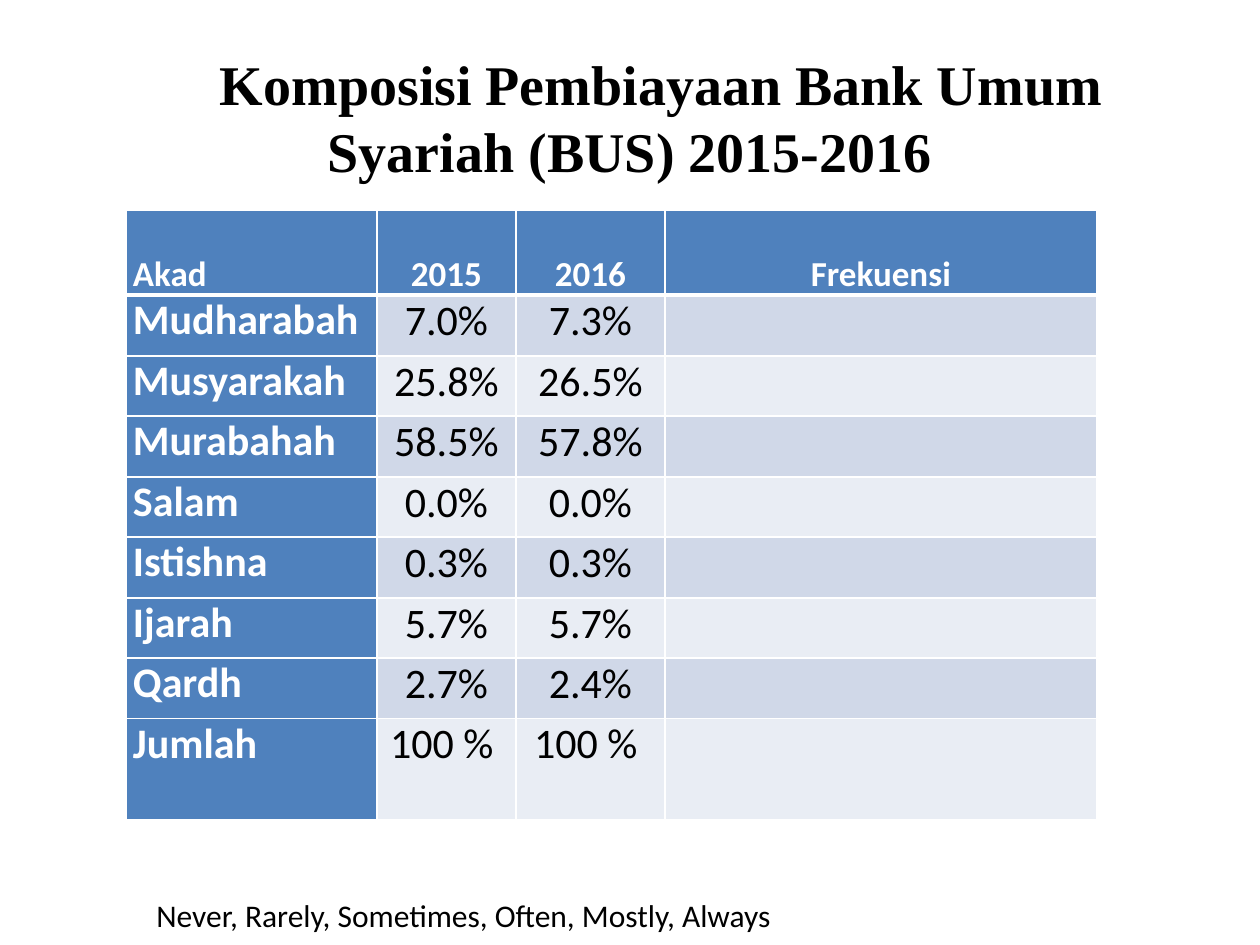
from lxml import etree
from pptx import Presentation, util as u
from pptx.dml.color import RGBColor
from pptx.enum import text
from pptx.oxml import ns

PX = 914400 // 126
COLORS = {"black": "000000", "white": "FFFFFF", "blue": "4F81BD",
          "dark_band": "D0D8E8", "light_band": "E9EDF4"}
CENTER, JUSTIFY = text.PP_ALIGN.CENTER, text.PP_ALIGN.JUSTIFY


def style(paragraph, size, color, bold=False, font="Calibri", align=None):
    paragraph.font.name = font
    paragraph.font.size = u.Pt(size)
    paragraph.font.bold = bold
    paragraph.font.color.rgb = RGBColor.from_string(COLORS[color])
    paragraph.alignment = align


def add_borders(cell, bottom_width):
    # Borders must come before the fill in the cell properties
    widths = {"lnL": 1, "lnR": 1, "lnT": 1, "lnB": bottom_width}
    for position, (side, width) in enumerate(widths.items()):
        line = etree.Element(ns.qn(f"a:{side}"), w=str(u.Pt(width)))
        fill = etree.SubElement(line, ns.qn("a:solidFill"))
        etree.SubElement(fill, ns.qn("a:srgbClr"), val=COLORS["white"])
        cell._tc.get_or_add_tcPr().insert(position, line)


prs = Presentation()
prs.slide_width, prs.slide_height = 1260 * PX, 945 * PX
slide = prs.slides.add_slide(prs.slide_layouts[6])

# Title, with an indented first line
title = slide.shapes.add_textbox(63 * PX, 38 * PX, 1134 * PX, 157 * PX).text_frame
title.word_wrap = True
title.vertical_anchor = text.MSO_ANCHOR.MIDDLE
heading = title.paragraphs[0]
heading.text = "Komposisi Pembiayaan Bank Umum Syariah (BUS) 2015-2016"
style(heading, 32, "black", True, "Times New Roman", CENTER)
heading._p.get_or_add_pPr().set("indent", str(63 * PX))

# Financing table
financing = [
    ("Akad", "2015", "2016", "Frekuensi"),
    ("Mudharabah", "7.0%", "7.3%", ""),
    ("Musyarakah", "25.8%", "26.5%", ""),
    ("Murabahah", "58.5%", "57.8%", ""),
    ("Salam", "0.0%", "0.0%", ""),
    ("Istishna", "0.3%", "0.3%", ""),
    ("Ijarah", "5.7%", "5.7%", ""),
    ("Qardh", "2.7%", "2.4%", ""),
    ("Jumlah", "100 % ", "100 % ", ""),
]
column_widths = [251, 139, 149, 432]
row_heights = [85, 61, 60, 61, 60, 61, 60, 61, 101]
table = slide.shapes.add_table(
    len(financing), len(column_widths), 126 * PX, 210 * PX,
    sum(column_widths) * PX, sum(row_heights) * PX).table
for column, width in zip(table.columns, column_widths):
    column.width = width * PX
for row, height in zip(table.rows, row_heights):
    row.height = height * PX

for r, values in enumerate(financing):
    for c, value in enumerate(values):
        cell = table.cell(r, c)
        header, label = r == 0, c == 0
        strong = header or label
        band = "blue" if strong else "dark_band" if r % 2 else "light_band"
        cell.fill.solid()
        cell.fill.fore_color.rgb = RGBColor.from_string(COLORS[band])
        add_borders(cell, 3 if header else 1)
        if not value:
            continue
        percentage = not strong and r < len(financing) - 1
        cell.margin_left = cell.margin_right = (1 if percentage else 7) * PX
        cell.margin_top = (1 if percentage else 0) * PX
        cell.margin_bottom = 0
        entry = cell.text_frame.paragraphs[0]
        entry.text = value
        style(entry, 20 if header else 24, "white" if strong else "black",
              strong, align=JUSTIFY if label else CENTER)
        if header:
            entry.line_spacing = 2.0

# Frequency scale
scale = slide.shapes.add_textbox(144 * PX, 890 * PX, 764 * PX, 50 * PX).text_frame
scale.word_wrap = True
choices = scale.paragraphs[0]
choices.text = "Never, Rarely, Sometimes, Often, Mostly, Always"
style(choices, 18, "black")

prs.save("out.pptx")
